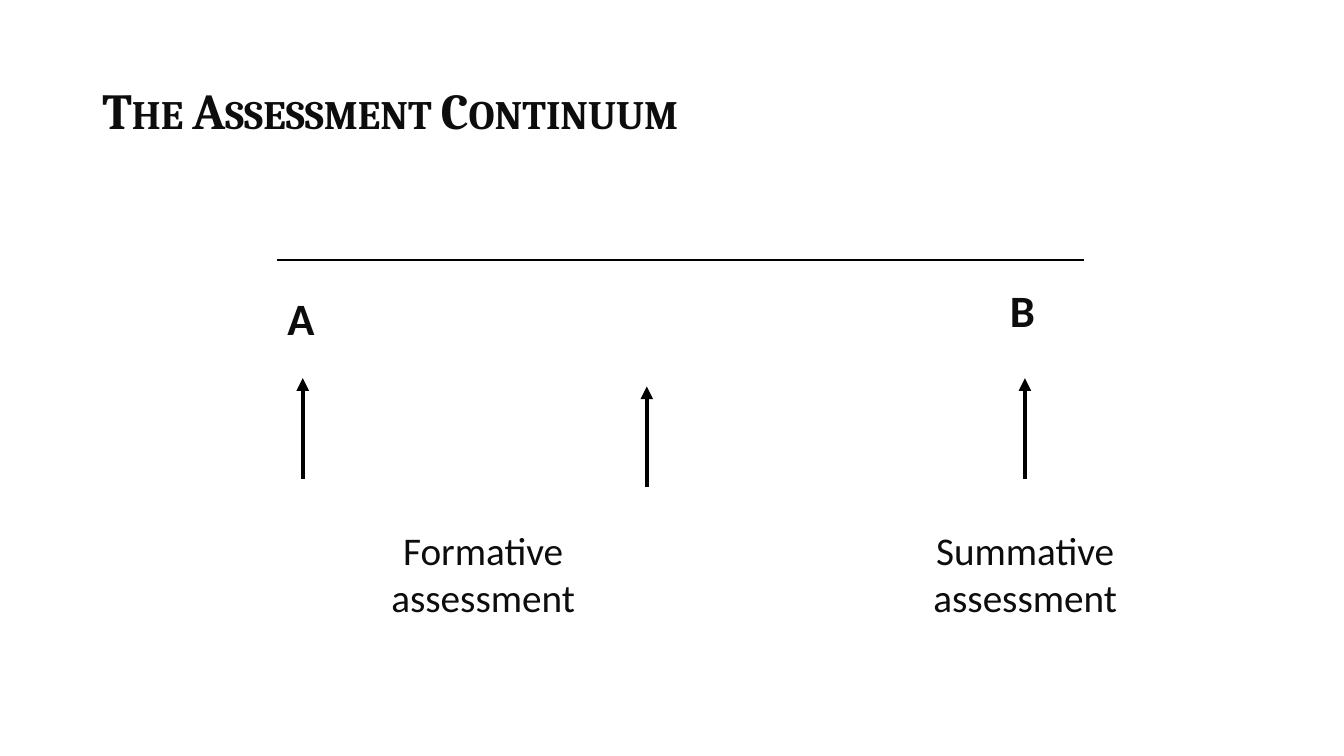
from lxml import etree
from pptx import Presentation
from pptx import util as u
from pptx.dml.color import RGBColor
from pptx.enum import shapes, text
from pptx.oxml.ns import qn

INK = "0D0D0D"


def color(hex_value):
    return RGBColor.from_string(hex_value)


def add_text(slide, box, words, size, font="Calibri", bold=False,
             align=text.PP_ALIGN.LEFT, anchor=text.MSO_ANCHOR.TOP):
    tf = slide.shapes.add_textbox(*[u.Cm(v) for v in box]).text_frame
    tf.word_wrap = True
    tf.vertical_anchor = anchor
    p = tf.paragraphs[0]
    p.text = words
    p.alignment = align
    r = p.runs[0]
    r.font.name = font
    r.font.size = u.Pt(size)
    r.font.bold = bold
    r.font.color.rgb = color(INK)
    return p


def add_line(slide, start, end, width, arrow=False):
    points = [u.Cm(v) for v in (*start, *end)]
    line = slide.shapes.add_connector(shapes.MSO_CONNECTOR.STRAIGHT, *points)
    line.line.color.rgb = color("000000")
    line.line.width = u.Pt(width)
    if arrow:
        ln = line.line._get_or_add_ln()
        etree.SubElement(ln, qn("a:tailEnd"), type="triangle")
    etree.SubElement(line._element.spPr, qn("a:effectLst"))


def add_title(slide, box):
    p = add_text(slide, box, "The Assessment Continuum", 36, "Cambria", True,
                 anchor=text.MSO_ANCHOR.MIDDLE)
    p.line_spacing = 0.9
    p.runs[0].font._element.set("cap", "small")


def add_continuum(slide, left, top, width):
    # Upward arrows below the scale
    for dx, dy in ((0.64, 2.97), (9.31, 3.18), (18.84, 2.97)):
        x, tip = left + dx, top + dy
        add_line(slide, (x, tip + 2.54), (x, tip), 3, arrow=True)

    # Scale line
    add_line(slide, (left, top), (left + width, top), 1.5)

    # End points
    for letter, dx, dy in (("A", 0, 0.64), ("B", 18.21, 0.43)):
        add_text(slide, (left + dx, top + dy, 1.9, 1.6), letter, 32, bold=True)

    # Kinds of assessment
    for kind, dx, w in (("Formative", 2.54, 5.29), ("Summative", 15.88, 5.93)):
        add_text(slide, (left + dx, top + 6.57, w, 2.62), f"{kind} assessment",
                 28, align=text.PP_ALIGN.CENTER)


def main():
    prs = Presentation()
    prs.slide_width, prs.slide_height = u.Cm(33.87), u.Cm(19.05)
    slide = prs.slides.add_slide(prs.slide_layouts[6])
    add_title(slide, (2.33, 1.01, 29.21, 3.68))
    add_continuum(slide, 6.99, 6.56, 20.32)
    prs.save("out.pptx")


if __name__ == "__main__":
    main()
